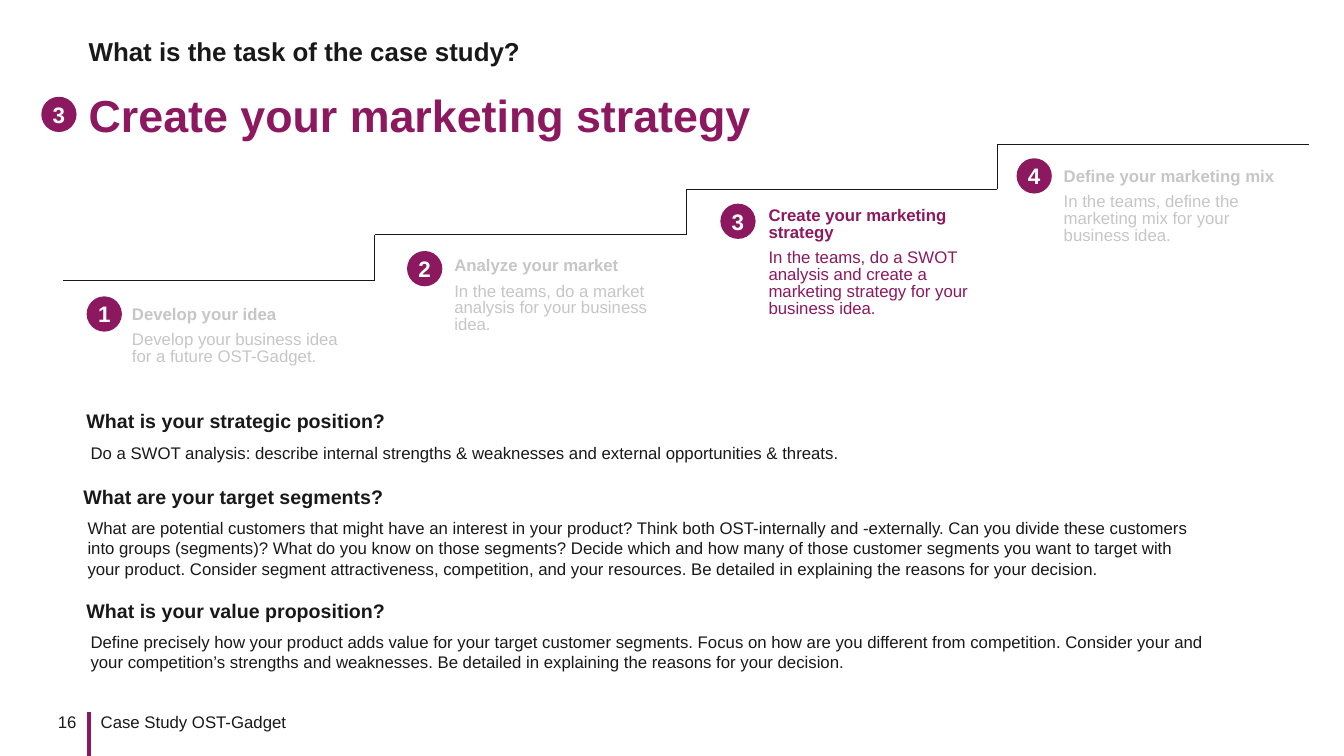
from dataclasses import dataclass

import pptx
import pptx.dml.color
import pptx.enum.shapes
import pptx.enum.text
import pptx.oxml
import pptx.util
from pptx.util import Inches

PURPLE, DARK, GREY, WHITE = "8C195F", "191919", "C6C6C6", "FFFFFF"
FONT = "Arial"
LEFT, CENTER, RIGHT = (pptx.enum.text.PP_ALIGN.LEFT, pptx.enum.text.PP_ALIGN.CENTER,
                       pptx.enum.text.PP_ALIGN.RIGHT)
TOP, MIDDLE = pptx.enum.text.MSO_ANCHOR.TOP, pptx.enum.text.MSO_ANCHOR.MIDDLE
DEFAULT_INSETS = (0.1, 0.05, 0.1, 0.05)
NO_INSETS = (0, 0, 0, 0)


@dataclass
class Step:
    title: str
    task: str
    left: float
    top: float
    badge_left: float
    badge_top: float
    insets: tuple[float, float, float, float]
    color: str = GREY


@dataclass
class Question:
    heading: str
    answer: str
    left: float
    top: float
    height: float


INDENTED, FLUSH = (0.4, 0.05, 0.1, 0.05), (0.1, 0.05, 0.4, 0.05)
STEPS = [
    Step("Develop your idea", "Develop your business idea for a future OST-Gadget.",
         0.91, 2.74, 0.86, 2.94, INDENTED),
    Step("Analyze your market", "In the teams, do a market analysis for your business idea.",
         4.11, 2.34, 4.04, 2.49, INDENTED),
    Step("Create your marketing strategy",
         "In the teams, do a SWOT analysis and create a marketing strategy for your "
         "business idea.", 7.53, 2.01, 7.15, 2.02, FLUSH, PURPLE),
    Step("Define your marketing mix",
         "In the teams, define the marketing mix for your business idea.",
         10.46, 1.45, 10.09, 1.57, FLUSH),
]
QUESTIONS = [
    Question("What is your strategic position?",
             "Do a SWOT analysis: describe internal strengths & weaknesses and external "
             "opportunities & threats.", 0.76, 4.01, 0.3),
    Question("What are your target segments?",
             "What are potential customers that might have an interest in your product? "
             "Think both OST-internally and -externally. Can you divide these customers into "
             "groups (segments)? What do you know on those segments? Decide which and how "
             "many of those customer segments you want to target with your product. Consider "
             "segment attractiveness, competition, and your resources. Be detailed in "
             "explaining the reasons for your decision.", 0.73, 4.76, 0.71),
    Question("What is your value proposition?",
             "Define precisely how your product adds value for your target customer segments. "
             "Focus on how are you different from competition. Consider your and your "
             "competition’s strengths and weaknesses. Be detailed in explaining the reasons "
             "for your decision.", 0.76, 5.89, 0.5),
]


def rgb(color: str) -> pptx.dml.color.RGBColor:
    return pptx.dml.color.RGBColor.from_string(color)


def setup_frame(tf, insets=DEFAULT_INSETS, anchor=TOP, wrap=True) -> None:
    tf.auto_size = pptx.enum.text.MSO_AUTO_SIZE.NONE
    tf.word_wrap = wrap
    tf.vertical_anchor = anchor
    tf.margin_left, tf.margin_top, tf.margin_right, tf.margin_bottom = map(Inches, insets)


def write(p, text: str, *, size=12, color=DARK, bold=False, align=LEFT,
          line=None, after=0) -> None:
    p.alignment = align
    p.space_before = pptx.util.Pt(0)
    p.space_after = pptx.util.Pt(after)
    if line is not None:
        p.line_spacing = line
    r = p.add_run()
    r.text = text
    r.font.name, r.font.size, r.font.bold = FONT, pptx.util.Pt(size), bold
    r.font.color.rgb = rgb(color)


def add_text(s, box, text: str, insets=DEFAULT_INSETS, **style) -> None:
    tf = s.shapes.add_textbox(*map(Inches, box)).text_frame
    setup_frame(tf, insets)
    write(tf.paragraphs[0], text, **style)


def fill_placeholder(sp, box, text: str, **style) -> None:
    sp.left, sp.top, sp.width, sp.height = map(Inches, box)
    setup_frame(sp.text_frame, NO_INSETS, MIDDLE)
    p = sp.text_frame.paragraphs[0]
    pPr = p._p.get_or_add_pPr()
    pPr.set("marL", "0")
    pPr.set("indent", "0")
    pPr.append(pptx.oxml.parse_xml(
        '<a:buNone xmlns:a="http://schemas.openxmlformats.org/drawingml/2006/main"/>'))
    write(p, text, **style)


def add_line(s, start, end, color: str, width: float) -> None:
    c = s.shapes.add_connector(pptx.enum.shapes.MSO_CONNECTOR.STRAIGHT,
                               *map(Inches, (*start, *end)))
    c.line.color.rgb = rgb(color)
    c.line.width = pptx.util.Pt(width)
    c._element.spPr.append(pptx.oxml.parse_xml(
        '<a:effectLst xmlns:a="http://schemas.openxmlformats.org/drawingml/2006/main"/>'))


def add_badge(s, left: float, top: float, number: int) -> None:
    sp = s.shapes.add_shape(pptx.enum.shapes.MSO_SHAPE.OVAL,
                            *map(Inches, (left, top, 0.35, 0.35)))
    sp.shadow.inherit = False
    sp.fill.solid()
    sp.fill.fore_color.rgb = rgb(PURPLE)
    sp.line.fill.background()
    setup_frame(sp.text_frame, (0.11, 0.06, 0.11, 0.06), MIDDLE, wrap=False)
    write(sp.text_frame.paragraphs[0], str(number), size=16, color=WHITE, bold=True,
          align=CENTER)


def add_step(s, number: int, step: Step) -> None:
    tf = s.shapes.add_textbox(*map(Inches, (step.left, step.top, 2.73, 1.2))).text_frame
    setup_frame(tf, step.insets, MIDDLE)
    style = dict(color=step.color, line=pptx.util.Pt(12), after=6)
    write(tf.paragraphs[0], step.title, bold=True, **style)
    write(tf.add_paragraph(), step.task, **style)
    add_badge(s, step.badge_left, step.badge_top, number)


def add_staircase(s, x=0.63, y=2.78, run=3.09, rise=0.45) -> None:
    corners = []
    for i in range(len(STEPS)):
        corners += [(x + i * run, y - i * rise), (x + (i + 1) * run, y - i * rise)]
    for start, end in zip(corners, corners[1:]):
        add_line(s, start, end, "181818", 0.75)


def add_question(s, q: Question) -> None:
    add_text(s, (q.left, q.top, 11.44, 0.34), q.heading, size=14, bold=True)
    add_text(s, (q.left + 0.04, q.top + 0.33, 11.35, q.height), q.answer)


def main() -> None:
    prs = pptx.Presentation()
    prs.slide_width, prs.slide_height = Inches(13.34), Inches(7.5)
    s = prs.slides.add_slide(prs.slide_layouts[1])

    fill_placeholder(s.shapes.title, (0.88, 0.76, 12.09, 0.75),
                     "Create your marketing strategy", size=32, color=PURPLE, bold=True)
    fill_placeholder(s.placeholders[1], (0.88, 0.37, 12.09, 0.31),
                     "What is the task of the case study?", size=18.5, bold=True, line=0.9)
    add_badge(s, 0.41, 0.96, 3)

    add_staircase(s)
    for number, step in enumerate(STEPS, 1):
        add_step(s, number, step)
    for question in QUESTIONS:
        add_question(s, question)

    add_line(s, (0.88, 7.06), (0.88, 7.5), PURPLE, 3)
    add_text(s, (0.29, 7.06, 0.59, 0.2), "16", (0, 0, 0.12, 0), align=RIGHT)
    add_text(s, (0.88, 7.06, 5.87, 0.36), "Case Study OST-Gadget", (0.12, 0, 0, 0))
    prs.save("out.pptx")


if __name__ == "__main__":
    main()
